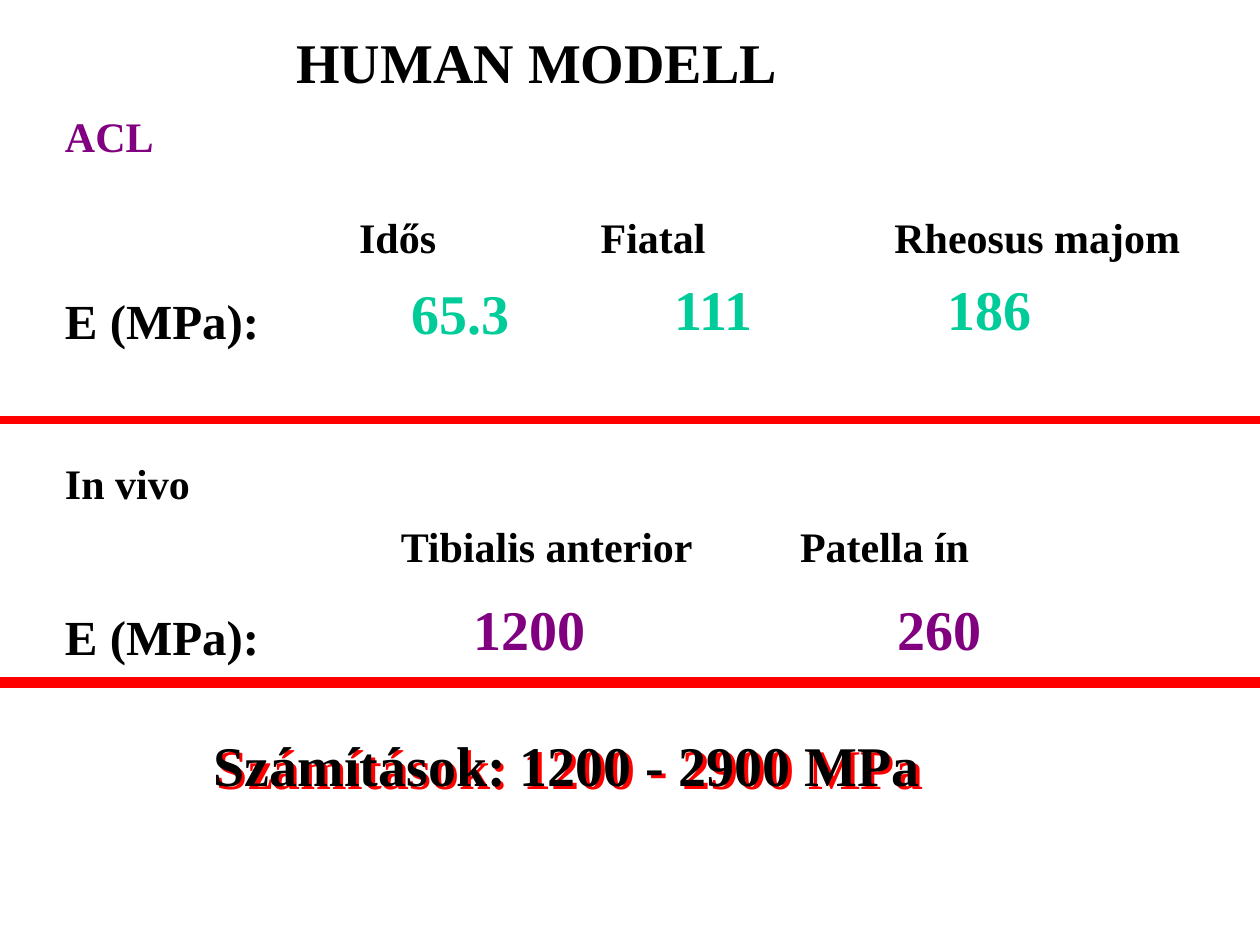
from lxml.etree import SubElement
from pptx import Presentation
from pptx.dml.color import RGBColor
from pptx.enum.shapes import MSO_CONNECTOR
from pptx.enum.text import MSO_ANCHOR, MSO_AUTO_SIZE, PP_ALIGN
from pptx.oxml.ns import qn
from pptx.util import Cm, Pt

FONT = "Times New Roman"
BLACK, PURPLE, GREEN, RED = "000000", "800080", "00CC99", "FF0000"
SLIDE_WIDTH, SLIDE_HEIGHT = 25.4, 19.05
MARGIN = 1.06
VALUE_WIDTH, VALUE_HEIGHT = 3.18, 1.6


def color(hex_string):
    return RGBColor.from_string(hex_string)


def write_text(shape, text, size=24, fill=BLACK, align=PP_ALIGN.LEFT, line_spacing=None):
    frame = shape.text_frame
    frame.word_wrap = True
    frame.auto_size = MSO_AUTO_SIZE.SHAPE_TO_FIT_TEXT
    frame.vertical_anchor = MSO_ANCHOR.TOP
    paragraph = frame.paragraphs[0]
    paragraph.alignment = align
    paragraph.line_spacing = line_spacing
    paragraph.space_before = Pt(0)
    run = paragraph.add_run()
    run.text = text
    run.font.name = FONT
    run.font.size = Pt(size)
    run.font.bold = True
    run.font.color.rgb = color(fill)


def add_text(slide, box, text, **text_format):
    shape = slide.shapes.add_textbox(*(Cm(length) for length in box))
    write_text(shape, text, **text_format)
    return shape


def add_title(slide, box, text):
    title = slide.shapes.title
    title.left, title.top, title.width, title.height = (Cm(length) for length in box)
    write_text(title, text, size=32)


def add_section(slide, box, heading, heading_fill, columns, rows, **value_format):
    """Rows gives the offsets of column names, label and values from the top.

    Each column is (name, name offset, name width, value, value offset, value drop).
    """
    left, top, width, height = box
    names_row, label_row, values_row = rows
    add_text(slide, (left, top, 7.62, 1.27), heading, fill=heading_fill)
    add_text(slide, (left, top + label_row, 6.78, 1.8), "E (MPa):",
             size=28, line_spacing=1.3)
    for name, name_x, name_width, value, value_x, drop in columns:
        add_text(slide, (left + name_x, top + names_row, name_width, 1.27), name)
        add_text(slide, (left + value_x, top + values_row + drop, VALUE_WIDTH, VALUE_HEIGHT),
                 value, size=32, **value_format)
    return top + height


def add_rule(slide, y, weight):
    line = slide.shapes.add_connector(
        MSO_CONNECTOR.STRAIGHT, Cm(0), Cm(y), Cm(SLIDE_WIDTH), Cm(y))
    line.line.color.rgb = color(RED)
    line.line.width = Pt(weight)
    SubElement(line._element.spPr, qn("a:effectLst"))


def add_conclusion(slide, box, text):
    shape = add_text(slide, box, text, size=32, align=PP_ALIGN.CENTER)
    effects = SubElement(shape._element.spPr, qn("a:effectLst"))
    shadow = SubElement(effects, qn("a:outerShdw"), dist=str(Cm(0.1)),
                        dir="2700000", algn="ctr", rotWithShape="0")
    SubElement(shadow, qn("a:srgbClr"), val=RED)


def main():
    presentation = Presentation()
    presentation.slide_width = Cm(SLIDE_WIDTH)
    presentation.slide_height = Cm(SLIDE_HEIGHT)
    slide = presentation.slides.add_slide(presentation.slide_layouts[5])
    section_width = SLIDE_WIDTH - MARGIN

    add_title(slide, (5.72, 0.43, 14.17, VALUE_HEIGHT), "HUMAN MODELL")
    bottom = add_section(
        slide, (MARGIN, 2.1, section_width, 6.37), "ACL", PURPLE,
        [("Idős", 5.93, 5.72, "65.3", 6.99, 0.08),
         ("Fiatal", 10.8, 5.72, "111", 12.28, 0),
         ("Rheosus majom", 16.72, 7.62, "186", 17.79, 0)],
        rows=(2.04, 3.28, 3.31), fill=GREEN)
    add_rule(slide, bottom, 4.5)
    bottom = add_section(
        slide, (MARGIN, 9.1, section_width, 4.66), "In vivo", BLACK,
        [("Tibialis anterior", 6.77, 6.78, "1200", 8.03, 0),
         ("Patella ín", 14.82, 6.78, "260", 16.3, 0)],
        rows=(1.27, 2.64, 2.76), fill=PURPLE, align=PP_ALIGN.CENTER)
    add_rule(slide, bottom, 6)
    add_conclusion(slide, (2.54, 14.6, 17.78, VALUE_HEIGHT), "Számítások: 1200 - 2900 MPa")

    presentation.save("out.pptx")


if __name__ == "__main__":
    main()
